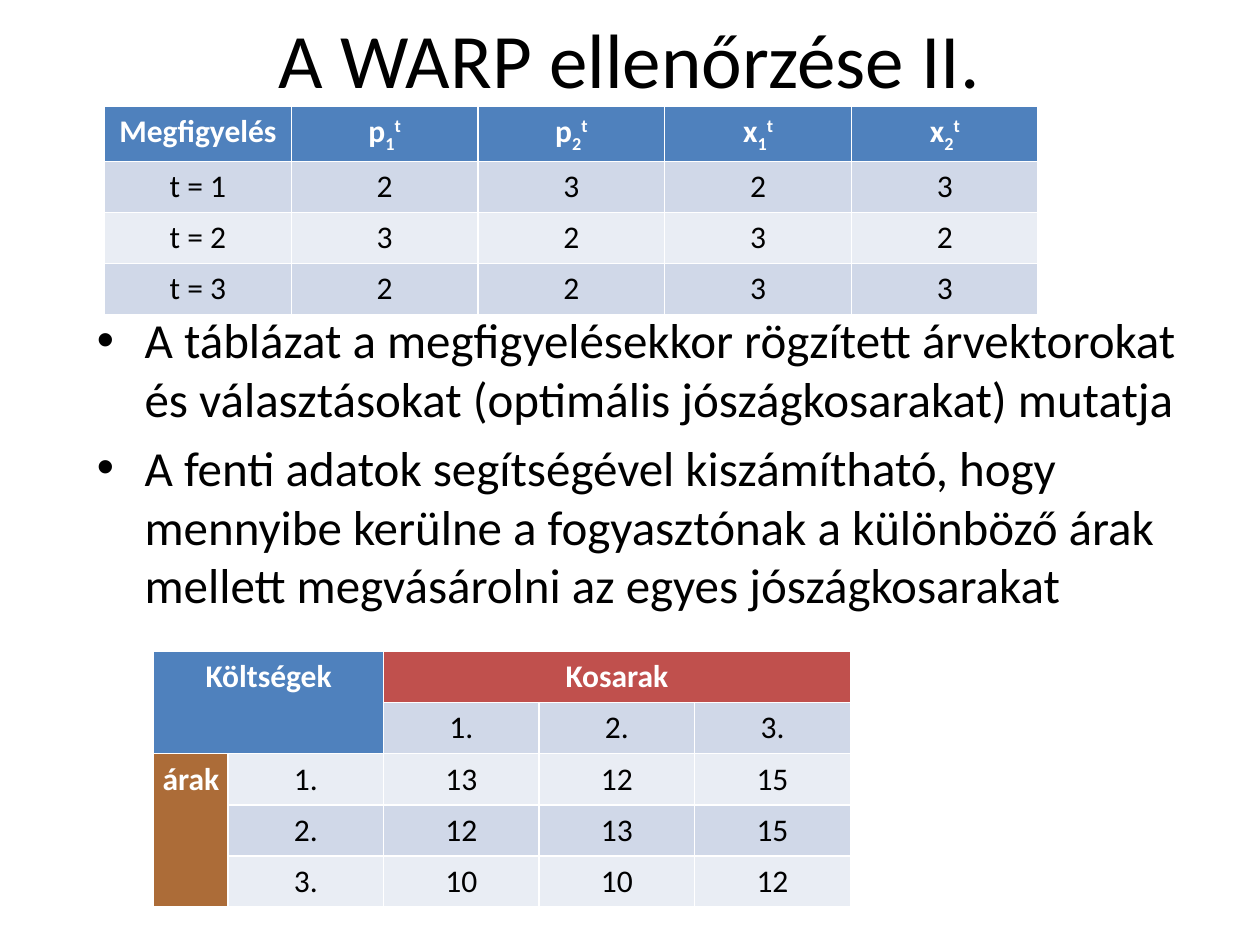
from dataclasses import dataclass

from lxml.etree import SubElement
from pptx import Presentation
from pptx.dml.color import RGBColor
from pptx.enum.text import MSO_ANCHOR, PP_ALIGN
from pptx.oxml.ns import qn
from pptx.util import Inches, Pt


@dataclass(frozen=True)
class Theme:
    font: str = "Calibri"
    ink: str = "000000"
    light: str = "FFFFFF"
    header: str = "4F81BD"
    baskets: str = "C0504D"
    prices: str = "984807"
    bands: tuple = ("D0D8E8", "E9EDF4")
    title_size: int = 44
    body_size: int = 28
    table_size: int = 18


THEME = Theme()
BASELINES = ("0", "-25000", "30000")


def style_run(run, size, color, bold=False):
    run.font.name = THEME.font
    run.font.size = Pt(size)
    run.font.bold = bold
    run.font.color.rgb = RGBColor.from_string(color)


def fill_cell(cell, parts, fill, heading=False):
    cell.fill.solid()
    cell.fill.fore_color.rgb = RGBColor.from_string(fill)
    cell.margin_left = cell.margin_right = Inches(0.05)
    cell.margin_top = cell.margin_bottom = Inches(0.05)
    paragraph = cell.text_frame.paragraphs[0]
    paragraph.alignment = PP_ALIGN.CENTER
    for part, baseline in zip(parts, BASELINES):
        run = paragraph.add_run()
        run.text = part
        style_run(run, THEME.table_size, THEME.light if heading else THEME.ink, heading)
        if baseline != "0":
            run.font._element.set("baseline", baseline)


def add_grid(slide, box, row_count, column_widths):
    grid = slide.shapes.add_table(row_count, len(column_widths), *box).table
    for column, width in zip(grid.columns, column_widths):
        column.width = width
    return grid


def add_title(slide, box, wording):
    frame = slide.shapes.add_textbox(*box).text_frame
    frame.word_wrap = True
    frame.vertical_anchor = MSO_ANCHOR.MIDDLE
    frame.text = wording
    paragraph = frame.paragraphs[0]
    paragraph.alignment = PP_ALIGN.CENTER
    style_run(paragraph.runs[0], THEME.title_size, THEME.ink)


def add_observations(slide, box, headings, observations):
    width = box[2]
    grid = add_grid(slide, box, len(observations) + 1, [width // len(headings)] * len(headings))
    for column, heading in enumerate(headings):
        fill_cell(grid.cell(0, column), heading, THEME.header, heading=True)
    for row, observation in enumerate(observations, 1):
        for column, value in enumerate(observation):
            fill_cell(grid.cell(row, column), [value], THEME.bands[(row - 1) % 2])


def add_bullets(slide, box, points):
    frame = slide.shapes.add_textbox(*box).text_frame
    frame.word_wrap = True
    frame.text = "\n".join(points)
    for paragraph in frame.paragraphs:
        paragraph.space_before = Pt(THEME.body_size * 0.2)
        style_run(paragraph.runs[0], THEME.body_size, THEME.ink)
        properties = paragraph._p.get_or_add_pPr()
        properties.set("marL", str(Inches(0.38)))
        properties.set("indent", str(-Inches(0.38)))
        SubElement(properties, qn("a:buFont"), typeface="Arial")
        SubElement(properties, qn("a:buChar"), char="•")


def add_costs(slide, box, costs):
    prices_width = Inches(0.59)
    labels = [f"{number}." for number in range(1, len(costs) + 1)]
    value_width = (box[2] - prices_width) // (len(labels) + 1)
    grid = add_grid(slide, box, len(costs) + 2, [prices_width] + [value_width] * (len(labels) + 1))
    last_row, last_column = len(costs) + 1, len(labels) + 1

    grid.cell(0, 0).merge(grid.cell(1, 1))
    grid.cell(0, 2).merge(grid.cell(0, last_column))
    grid.cell(2, 0).merge(grid.cell(last_row, 0))
    fill_cell(grid.cell(0, 0), ["Költségek"], THEME.header, heading=True)
    fill_cell(grid.cell(0, 2), ["Kosarak"], THEME.baskets, heading=True)
    prices = grid.cell(2, 0)
    fill_cell(prices, ["árak"], THEME.prices, heading=True)
    prices_color = prices._tc.tcPr.find(qn("a:solidFill")).find(qn("a:srgbClr"))
    SubElement(prices_color, qn("a:alpha"), val="80000")

    for column, label in enumerate(labels, 2):
        fill_cell(grid.cell(1, column), [label], THEME.bands[0])
    for row, (label, values) in enumerate(zip(labels, costs), 2):
        for column, value in enumerate([label, *values], 1):
            fill_cell(grid.cell(row, column), [str(value)], THEME.bands[(row - 1) % 2])


def box_of(left, top, width, height):
    return Inches(left), Inches(top), Inches(width), Inches(height)


def main():
    deck = Presentation()
    deck.slide_width, deck.slide_height = Inches(10), Inches(7.5)
    slide = deck.slides.add_slide(deck.slide_layouts[6])
    add_title(slide, box_of(0.51, 0, 8.98, 0.92), "A WARP ellenőrzése II.")
    add_observations(
        slide,
        box_of(0.83, 0.84, 7.41, 1.62),
        [["Megfigyelés"], "p1t", "p2t", "x1t", "x2t"],
        [
            ("t = 1", "2", "3", "2", "3"),
            ("t = 2", "3", "2", "3", "2"),
            ("t = 3", "2", "2", "3", "3"),
        ],
    )
    add_bullets(
        slide,
        box_of(0.67, 2.41, 8.83, 3.74),
        [
            "A táblázat a megfigyelésekkor rögzített árvektorokat és választásokat "
            "(optimális jószágkosarakat) mutatja",
            "A fenti adatok segítségével kiszámítható, hogy mennyibe kerülne a fogyasztónak "
            "a különböző árak mellett megvásárolni az egyes jószágkosarakat",
        ],
    )
    add_costs(
        slide,
        box_of(1.22, 5.17, 5.53, 2.03),
        [(13, 12, 15), (12, 13, 15), (10, 10, 12)],
    )
    deck.save("out.pptx")


if __name__ == "__main__":
    main()
